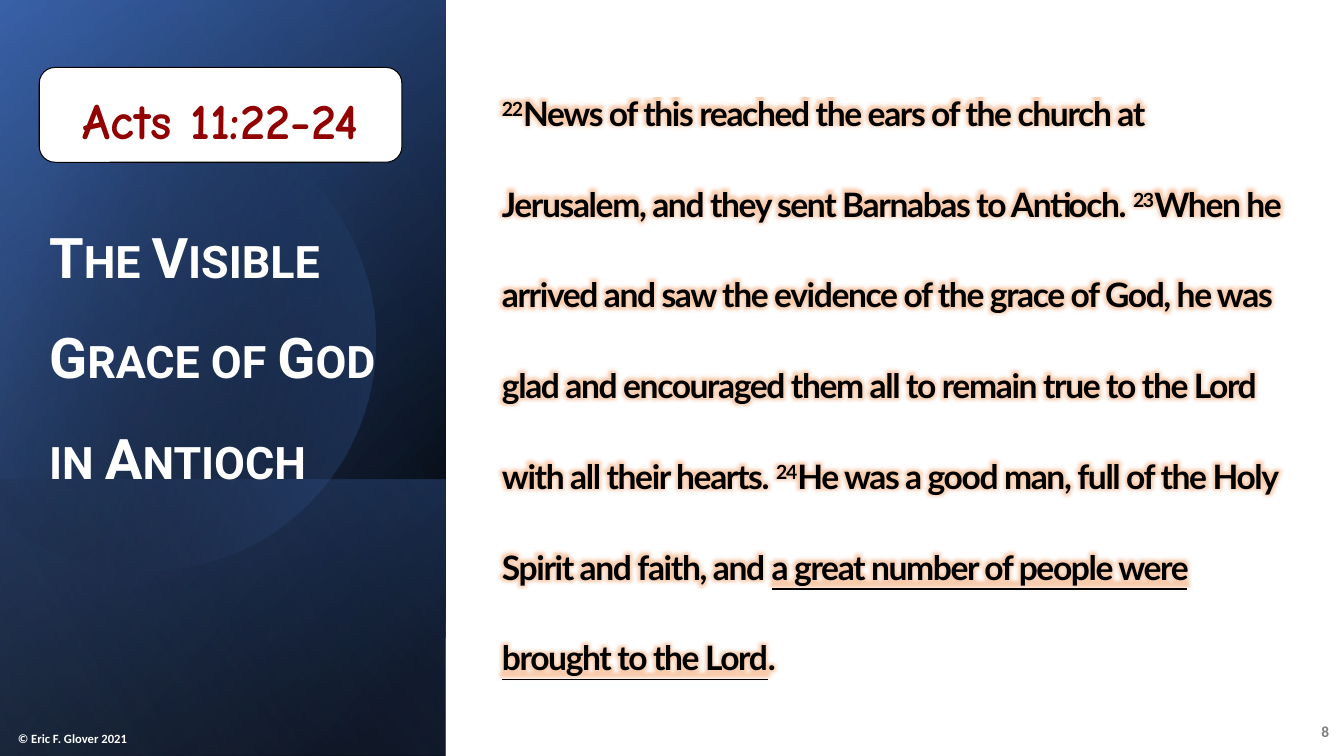
import math
from dataclasses import dataclass

import pptx
import pptx.dml.color
import pptx.enum.shapes
import pptx.enum.text
import pptx.oxml
import pptx.oxml.ns
import pptx.util

Cm = pptx.util.Cm
Pt = pptx.util.Pt
qn = pptx.oxml.ns.qn
SHAPE = pptx.enum.shapes.MSO_SHAPE
ALIGN = pptx.enum.text.PP_ALIGN
ANCHOR = pptx.enum.text.MSO_ANCHOR


@dataclass(frozen=True)
class Theme:
    white: str = "FFFFFF"
    black: str = "000000"
    navy: str = "2F5597"
    blue: str = "4472C4"
    pale_blue: str = "8FAADC"
    red: str = "910101"
    gray: str = "808080"
    glow: str = "ED7D31"
    title_font: str = "Roboto"
    verse_font: str = "Lato"
    reference_font: str = "Comic Neue"
    small_font: str = "Calibri"
    title_size: int = 40
    reference_size: int = 36
    verse_size: int = 24
    number_size: int = 11
    credit_size: int = 9


T = Theme()
PANEL_W, PANEL_H = 11.23, 19.05
LOWER_H = 6.96

VERSES = [
    ("22", "super"),
    ("News of this reached the ears of the church at Jerusalem, "
     "and they sent Barnabas to Antioch. ", ""),
    ("23", "super"),
    ("When he arrived and saw the evidence of the grace of God, he was glad and "
     "encouraged them all to remain true to the Lord with all their hearts. ", ""),
    ("24", "super"),
    ("He was a good man, full of the Holy Spirit and faith, and ", ""),
    ("a great number of people were brought to the Lord", "underline"),
    (".", ""),
]


def rgb(color):
    return pptx.dml.color.RGBColor.from_string(color)


def format_run(r, font, size, color):
    r.font.name = font
    r.font.size = Pt(size)
    r.font.bold = True
    r.font.color.rgb = rgb(color)


def format_frame(tf, anchor, insets=(0.25, 0.13, 0.25, 0.13)):
    tf.word_wrap = True
    tf.auto_size = pptx.enum.text.MSO_AUTO_SIZE.NONE
    tf.vertical_anchor = anchor
    tf.margin_left, tf.margin_top, tf.margin_right, tf.margin_bottom = map(Cm, insets)


def set_gradient(sp, stops, angle):
    sp.fill.background()
    gs = "".join(
        f'<a:gs pos="{pos * 1000}"><a:srgbClr val="{color}">'
        f'<a:alpha val="{alpha * 1000}"/></a:srgbClr></a:gs>'
        for pos, color, alpha in stops)
    grad = pptx.oxml.parse_xml(
        f'<a:gradFill {pptx.oxml.ns.nsdecls("a")} rotWithShape="1"><a:gsLst>{gs}</a:gsLst>'
        f'<a:lin ang="{angle * 60000}" scaled="0"/></a:gradFill>')
    spPr = sp._element.spPr
    spPr.replace(spPr.find(qn("a:noFill")), grad)


def add_plain_shape(s, kind, left, top, width, height):
    sp = s.shapes.add_shape(kind, Cm(left), Cm(top), Cm(width), Cm(height))
    sp.shadow.inherit = False
    sp.line.fill.background()
    return sp


def add_panel(s, height, stops, angle):
    middle = PANEL_H - height / 2
    sp = add_plain_shape(s, SHAPE.RECTANGLE, (PANEL_W - height) / 2,
                         middle - PANEL_W / 2, height, PANEL_W)
    sp.rotation = 90
    sp._element.spPr.xfrm.set("flipH", "1")
    set_gradient(sp, stops, angle)


def add_cut_circle(s):
    cx, cy, radius = 3.67, 8.49, 5.79
    start, sweep, steps = 241.1, 270, 90
    angles = [math.radians(start + sweep * i / steps) for i in range(steps + 1)]
    points = [(Cm(cx + radius * math.cos(a)), Cm(cy + radius * math.sin(a)))
              for a in angles]
    builder = s.shapes.build_freeform(*points[0], scale=1.0)
    builder.add_line_segments(points[1:], close=True)
    sp = builder.convert_to_shape()
    sp.shadow.inherit = False
    sp.line.fill.background()
    sp.rotation = 343.9
    set_gradient(sp, [(29, T.black, 0), (100, T.blue, 43)], 30)


def add_label(s, text, box, size, color, anchor, align):
    sp = s.shapes.add_textbox(*map(Cm, box))
    format_frame(sp.text_frame, anchor)
    p = sp.text_frame.paragraphs[0]
    p.text = text
    p.alignment = align
    format_run(p.runs[0], T.small_font, size, color)


def add_glow(r):
    r.font._element.find(qn("a:solidFill")).addnext(pptx.oxml.parse_xml(
        f'<a:effectLst {pptx.oxml.ns.nsdecls("a")}><a:glow rad="101600">'
        f'<a:srgbClr val="{T.glow}"><a:alpha val="40000"/></a:srgbClr>'
        '</a:glow></a:effectLst>'))


def add_verses(s):
    sp = s.shapes.add_textbox(Cm(12.4), Cm(1.07), Cm(20.32), Cm(17.35))
    format_frame(sp.text_frame, ANCHOR.TOP, (0.25, 0, 0.25, 0.13))
    p = sp.text_frame.paragraphs[0]
    p.line_spacing = 2.25
    p.space_after = Pt(6)
    for text, style in VERSES:
        r = p.add_run()
        r.text = text
        format_run(r, T.verse_font, T.verse_size, T.black)
        add_glow(r)
        rPr = r.font._element
        rPr.set("spc", "-100")
        if style == "super":
            rPr.set("baseline", "30000")
        r.font.underline = style == "underline"


def add_reference(s):
    sp = add_plain_shape(s, SHAPE.ROUNDED_RECTANGLE, 0.99, 1.7, 9.14, 2.39)
    sp.fill.solid()
    sp.fill.fore_color.rgb = rgb(T.white)
    sp.line.color.rgb = rgb(T.black)
    sp.line.width = Pt(0.75)
    format_frame(sp.text_frame, ANCHOR.MIDDLE, (0.25, 0.25, 0.25, 0))
    p = sp.text_frame.paragraphs[0]
    p.text = "Acts 11:22-24"
    p.alignment = ALIGN.CENTER
    p.space_after = Pt(6)
    format_run(p.runs[0], T.reference_font, T.reference_size, T.red)


def place_title(s):
    sp = s.shapes.title
    sp.left, sp.top, sp.width, sp.height = map(Cm, (0.99, 4.62, 9.3, 11.85))
    s.shapes._spTree.append(sp._element)
    format_frame(sp.text_frame, ANCHOR.TOP)
    p = sp.text_frame.paragraphs[0]
    p.text = "The Visible \vGrace of God \vin Antioch"
    p.alignment = ALIGN.LEFT
    p.line_spacing = 1.5
    p.space_before = Pt(0)
    p.space_after = Pt(6)
    for r in p.runs:
        format_run(r, T.title_font, T.title_size, T.white)
        r.font._element.set("cap", "small")


def main():
    prs = pptx.Presentation()
    prs.slide_width, prs.slide_height = Cm(33.87), Cm(PANEL_H)
    s = prs.slides.add_slide(prs.slide_layouts[5])
    backdrop = add_plain_shape(s, SHAPE.RECTANGLE, 0, 0, 33.87, PANEL_H)
    backdrop.fill.solid()
    backdrop.fill.fore_color.rgb = rgb(T.white)
    add_panel(s, PANEL_H, [(8, T.black, 100), (100, T.navy, 100)], 50)
    add_panel(s, PANEL_H, [(0, T.black, 0), (99, T.blue, 46)], 30)
    add_panel(s, LOWER_H, [(2, T.blue, 29), (100, T.black, 30)], 130)
    add_cut_circle(s)
    add_panel(s, PANEL_H, [(0, T.black, 0), (99, T.pale_blue, 11)], 120)
    add_verses(s)
    add_label(s, "8", (32.51, 17.93, 1.24, 1.02), T.number_size, T.gray,
              ANCHOR.MIDDLE, ALIGN.RIGHT)
    add_reference(s)
    place_title(s)
    add_label(s, "© Eric F. Glover 2021", (0.2, 18.21, 3.99, 0.71), T.credit_size,
              T.white, ANCHOR.BOTTOM, ALIGN.LEFT)
    prs.save("out.pptx")


if __name__ == "__main__":
    main()
